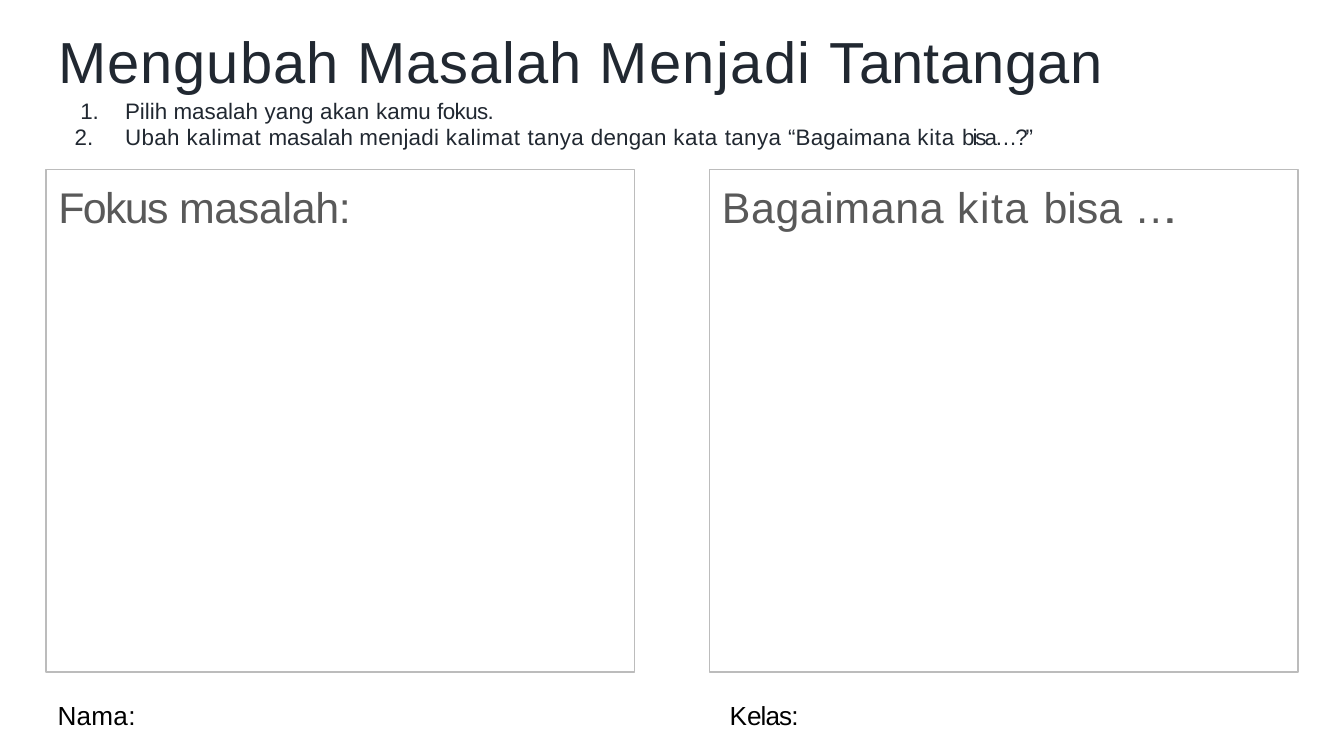
import pptx
import pptx.util
import pptx.dml.color
import pptx.enum.shapes
import pptx.enum.text
import pptx.oxml.ns
import lxml.etree

Pt = pptx.util.Pt
RGBColor = pptx.dml.color.RGBColor

INK = RGBColor(0x21, 0x28, 0x31)
GRAY = RGBColor(0x59, 0x59, 0x59)
BORDER = RGBColor(0xBC, 0xBC, 0xBC)
BLACK = RGBColor(0, 0, 0)
FONT = "Arial"

COLUMNS = (
    ([("Fokus ", -0.9), ("masalah:", -0.2)], [("Nama:", 0.1)], 30.2, 44),
    ([("Bagaimana ", 0.3), ("kita ", 0.8), ("bisa ", 0), ("….", -6.8)],
     [("K", 0), ("elas:", -0.5)], 390.2, 39),
)
STEPS = (
    ([("Pilih masalah ", 0), ("yang akan ", 0.1), ("kamu ", 0), ("fokus.", -0.3)], -24, 1),
    ([("Ubah ", 0.2), ("kalimat ", 0.3), ("masalah ", 0), ("menjadi ", 0.1),
      ("kalimat ", 0.3), ("tanya ", 0.2), ("dengan ", 0.1), ("kata ", 0.3),
      ("tanya ", 0.2), ("“Bagaimana ", 0.1), ("kita ", 0.4), ("bisa…?”", -1.1)], -27, 0),
)


def write(paragraph, words, size, color, before=1, margin=0.7, indent=0,
          leading=None, numbered=False):
    paragraph.alignment = pptx.enum.text.PP_ALIGN.LEFT
    paragraph.space_before = Pt(before)
    if leading:
        paragraph.line_spacing = Pt(leading)
    properties = paragraph._p.get_or_add_pPr()
    properties.set("marL", str(Pt(margin)))
    properties.set("indent", str(Pt(indent)))
    if numbered:
        lxml.etree.SubElement(properties, pptx.oxml.ns.qn("a:buAutoNum"),
                              type="arabicPeriod")
    for text, spacing in words:
        run = paragraph.add_run()
        run.text = text
        run.font.name = FONT
        run.font.size = Pt(size)
        run.font.color.rgb = color
        run.font._element.set("spc", str(round(spacing * 100)))


def prepare_frame(holder, top_inset=0.9):
    frame = holder.text_frame
    frame.word_wrap = True
    frame.vertical_anchor = pptx.enum.text.MSO_ANCHOR.TOP
    frame.margin_left = frame.margin_right = frame.margin_bottom = 0
    frame.margin_top = Pt(top_inset)
    return frame


def add_text_area(slide, left, top, width, height):
    return prepare_frame(slide.shapes.add_textbox(Pt(left), Pt(top), Pt(width), Pt(height)))


def add_heading(slide, left, top, width, height):
    title = add_text_area(slide, left, top, width, height)
    write(title.paragraphs[0],
          [("Mengubah ", 0.6), ("Masalah ", 0.5), ("Menjadi ", 0.8), ("Tantangan", 0.2)],
          31, INK)


def add_steps(slide, left, top, width, height):
    steps = add_text_area(slide, left, top, width, height)
    for number, (words, indent, before) in enumerate(STEPS):
        paragraph = steps.add_paragraph() if number else steps.paragraphs[0]
        write(paragraph, words, 12, INK, before=before, margin=27.4,
              indent=indent, leading=14.3, numbered=True)


def add_answer_panel(slide, words, left, top, width, height):
    panel = slide.shapes.add_shape(pptx.enum.shapes.MSO_SHAPE.RECTANGLE,
                                   Pt(left), Pt(top), Pt(width), Pt(height))
    panel.shadow.inherit = False
    panel.fill.background()
    panel.line.color.rgb = BORDER
    panel.line.width = Pt(0.75)
    write(prepare_frame(panel, 5.8).paragraphs[0], words, 23, GRAY, before=5.8, margin=6.7)


def add_identity_label(slide, words, left, top, width, height):
    label = add_text_area(slide, left, top, width, height)
    write(label.paragraphs[0], words, 14, BLACK)


def main():
    deck = pptx.Presentation()
    deck.slide_width, deck.slide_height = Pt(720), Pt(405)
    slide = deck.slides.add_slide(deck.slide_layouts[6])
    add_heading(slide, 30.5, 13, 568, 39)
    add_steps(slide, 39.6, 51.1, 519, 31)
    panel_width, margin = 315.4, 24.6
    pitch = 720 - 2 * margin - panel_width
    for column, (prompt, identity, label_left, label_width) in enumerate(COLUMNS):
        add_answer_panel(slide, prompt, margin + column * pitch, 90.8, panel_width, 269.2)
        add_identity_label(slide, identity, label_left, 373.7, label_width, 18.7)
    deck.save("out.pptx")


if __name__ == "__main__":
    main()
